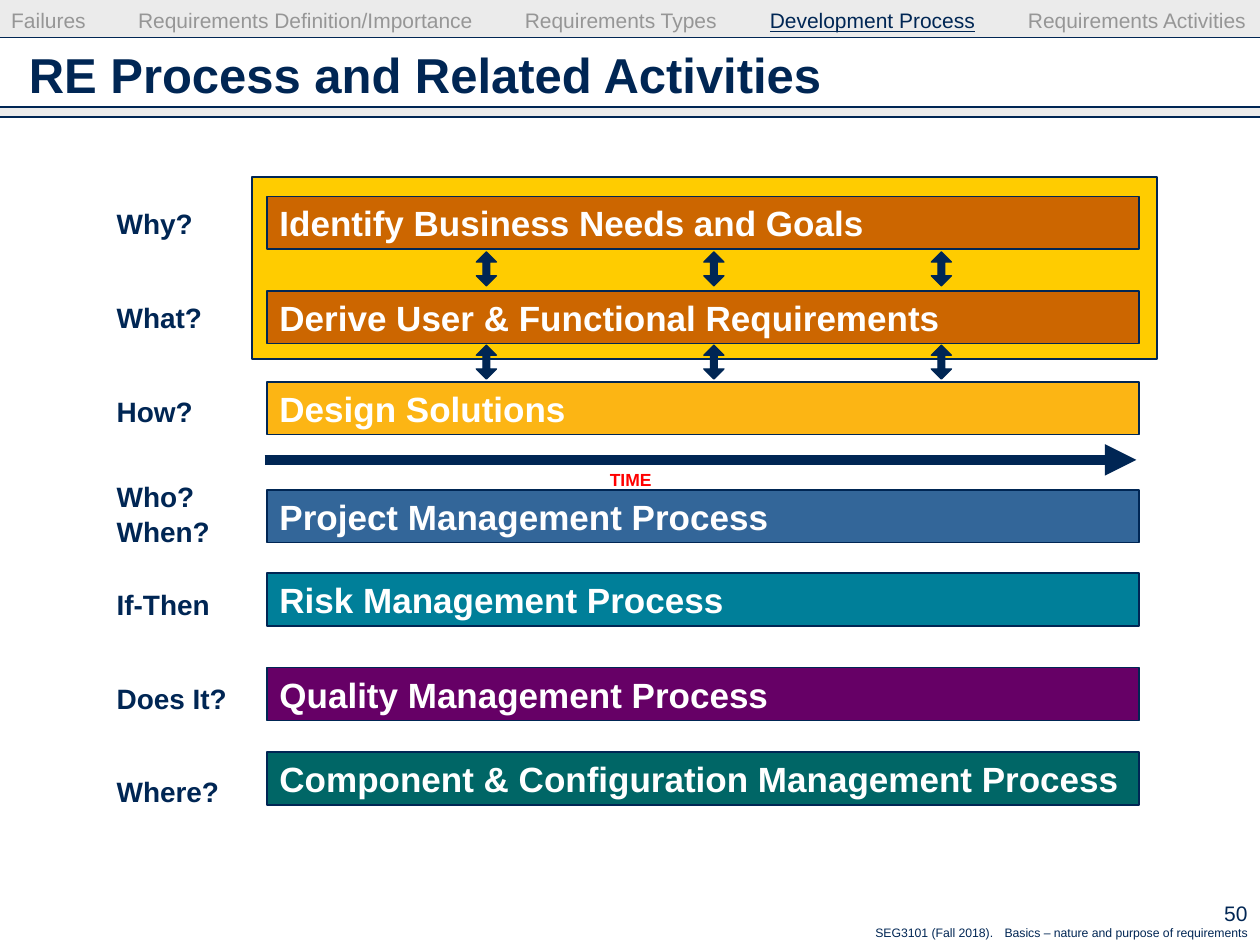
"""Build the slide on the RE process and its related activities."""
import pptx
import pptx.dml.color
import pptx.enum.dml
import pptx.enum.shapes
import pptx.enum.text
import pptx.oxml
import pptx.oxml.ns
import pptx.util
from lxml import etree

Pt = pptx.util.Pt
ALIGN = pptx.enum.text.PP_ALIGN
ANCHOR = pptx.enum.text.MSO_ANCHOR
SHAPE = pptx.enum.shapes.MSO_SHAPE

THEME = {
    "font": "Arial", "navy": "002654", "grey": "969696", "band": "CDCDCD",
    "white": "FFFFFF", "red": "FF0000", "panel": "FFCC00", "needs": "CC6600",
    "design": "FCB514", "project": "336699", "risk": "007F99",
    "quality": "660066", "configuration": "006666",
    "title": 28, "bar": 20, "label": 16, "nav": 12, "time": 10, "footer": 7,
    "outline": 0.75,
}

SECTIONS = ["Failures", "Requirements Definition/Importance", "Requirements Types",
            "Development Process", "Requirements Activities"]
CURRENT_SECTION = "Development Process"
SECTION_TABS = [72.5, 293.5, 433.5, 581]
TITLE = "RE Process and Related Activities"
BARS = [
    ("Identify Business Needs and Goals", "needs", 112.2),
    ("Derive User & Functional Requirements", "needs", 166.3),
    ("Design Solutions", "design", 218.2),
    ("Project Management Process", "project", 280),
    ("Risk Management Process", "risk", 327.5),
    ("Quality Management Process", "quality", 381.6),
    ("Component & Configuration Management Process", "configuration", 429.8),
]
QUESTIONS = [("Why?", 0), ("What?", 34.5), ("How?", 34.5), ("Who?", 29.5),
             ("When?", 1), ("If-Then", 22), ("Does It?", 34.5), ("Where?", 34.5)]
FOOTER = [("SEG3101 (Fall 2018).", 574.6),
          ("Basics – nature and purpose of requirements", 720)]
PAGE_NUMBER = "50"

BAR_LEFT, BAR_WIDTH, BAR_HEIGHT = 152.6, 498.3, 30.2
ARROW_LEFT, ARROW_STEP, ARROW_TOPS = 272.2, 130, (144, 197.2)


def color(name):
    return pptx.dml.color.RGBColor.from_string(THEME[name])


def lengths(frame):
    return [Pt(value) for value in frame]


def add_span(para, text, size, ink="navy", bold=False, underline=False):
    span = para.add_run()
    span.text = text
    span.font.name, span.font.size = THEME["font"], Pt(THEME[size])
    span.font.bold, span.font.underline = bold, underline
    span.font.color.rgb = color(ink)


def write(box, text, size, ink="navy", bold=False, align=ALIGN.LEFT,
          anchor=ANCHOR.TOP, wrap=True, gaps=(0,)):
    frame = box.text_frame
    frame.word_wrap, frame.vertical_anchor = wrap, anchor
    for index, (line, gap) in enumerate(zip(text.split("\n"), gaps)):
        para = frame.add_paragraph() if index else frame.paragraphs[0]
        para.alignment, para.space_before = align, Pt(gap)
        add_span(para, line, size, ink, bold)


def add_text(page, frame, text, size, **style):
    write(page.shapes.add_textbox(*lengths(frame)), text, size, **style)


def add_block(page, kind, frame, fill, outline=None, alpha=None):
    block = page.shapes.add_shape(kind, *lengths(frame))
    block.shadow.inherit = False
    block.fill.solid()
    block.fill.fore_color.rgb = color(fill)
    if outline:
        block.line.color.rgb, block.line.width = color("navy"), Pt(outline)
    else:
        block.line.fill.background()
    if alpha:
        tint = block.fill._xPr.find(".//" + pptx.oxml.ns.qn("a:srgbClr"))
        etree.SubElement(tint, pptx.oxml.ns.qn("a:alpha")).set("val", str(alpha * 1000))
    return block


def add_line(page, left, right, height, width, arrow=False):
    line = page.shapes.add_connector(pptx.enum.shapes.MSO_CONNECTOR.STRAIGHT,
                                     *lengths((left, height, right, height)))
    line.line.color.rgb, line.line.width = color("navy"), Pt(width)
    if arrow:
        stroke = line.line._get_or_add_ln()
        etree.SubElement(stroke, pptx.oxml.ns.qn("a:tailEnd")).set("type", "triangle")
    etree.SubElement(line._element.spPr, pptx.oxml.ns.qn("a:effectLst"))


def add_navigation(page):
    box = page.shapes.add_textbox(*lengths((-0.7, 4.5, 721.4, 18)))
    frame = box.text_frame
    frame.word_wrap, frame.margin_top = False, 0
    para = frame.paragraphs[0]
    tabs = etree.SubElement(para._p.get_or_add_pPr(), pptx.oxml.ns.qn("a:tabLst"))
    for position in SECTION_TABS:
        tab = etree.SubElement(tabs, pptx.oxml.ns.qn("a:tab"))
        tab.set("pos", str(int(Pt(position))))
        tab.set("algn", "l")
    for index, section in enumerate(SECTIONS):
        if index:
            add_span(para, "\t", "nav", "grey")
        current = section == CURRENT_SECTION
        add_span(para, section, "nav", "navy" if current else "grey", underline=current)


def add_frame(page):
    for top, height in ((0, 21.6), (61.2, 5.4)):
        add_block(page, SHAPE.RECTANGLE, (0, top, 720, height), "band", alpha=40)
    for height in (21.6, 61.2, 66.8):
        add_line(page, 0, 720, height, THEME["outline"])
    add_navigation(page)
    add_text(page, (9.4, 18.7, 701.3, 47.5), TITLE, "title", bold=True, anchor=ANCHOR.MIDDLE)
    add_text(page, (669.6, 509.8, 50.4, 24.5), PAGE_NUMBER, "nav",
             align=ALIGN.RIGHT, anchor=ANCHOR.MIDDLE)
    for text, right in FOOTER:
        add_text(page, (right - 200, 525, 200, 15), text, "footer", align=ALIGN.RIGHT)


def add_process(page):
    questions, gaps = zip(*QUESTIONS)
    add_text(page, (59.6, 114.5, 95.8, 346.3), "\n".join(questions), "label",
             bold=True, gaps=gaps)
    add_block(page, SHAPE.RECTANGLE, (144, 101, 517, 104), "panel", outline=1)
    for text, fill, top in BARS:
        bar = add_block(page, SHAPE.RECTANGLE, (BAR_LEFT, top, BAR_WIDTH, BAR_HEIGHT),
                        fill, outline=THEME["outline"])
        write(bar, text, "bar", ink="white", bold=True, anchor=ANCHOR.MIDDLE)
    for top in ARROW_TOPS:
        for column in range(3):
            frame = (ARROW_LEFT + column * ARROW_STEP, top, 11.5, 19.4)
            arrow = add_block(page, SHAPE.UP_DOWN_ARROW, frame, "navy", THEME["outline"])
            arrow.adjustments[0], arrow.adjustments[1] = 0.5, 0.34
    add_line(page, 151.2, 649.4, 262.8, 6, arrow=True)
    add_text(page, (341.3, 264.2, 38.2, 19.4), "TIME", "time", ink="red", bold=True,
             align=ALIGN.CENTER, anchor=ANCHOR.MIDDLE, wrap=False)


def main():
    deck = pptx.Presentation()
    deck.slide_width, deck.slide_height = Pt(720), Pt(540)
    page = deck.slides.add_slide(deck.slide_layouts[6])
    add_frame(page)
    add_process(page)
    deck.save("out.pptx")


if __name__ == "__main__":
    main()
